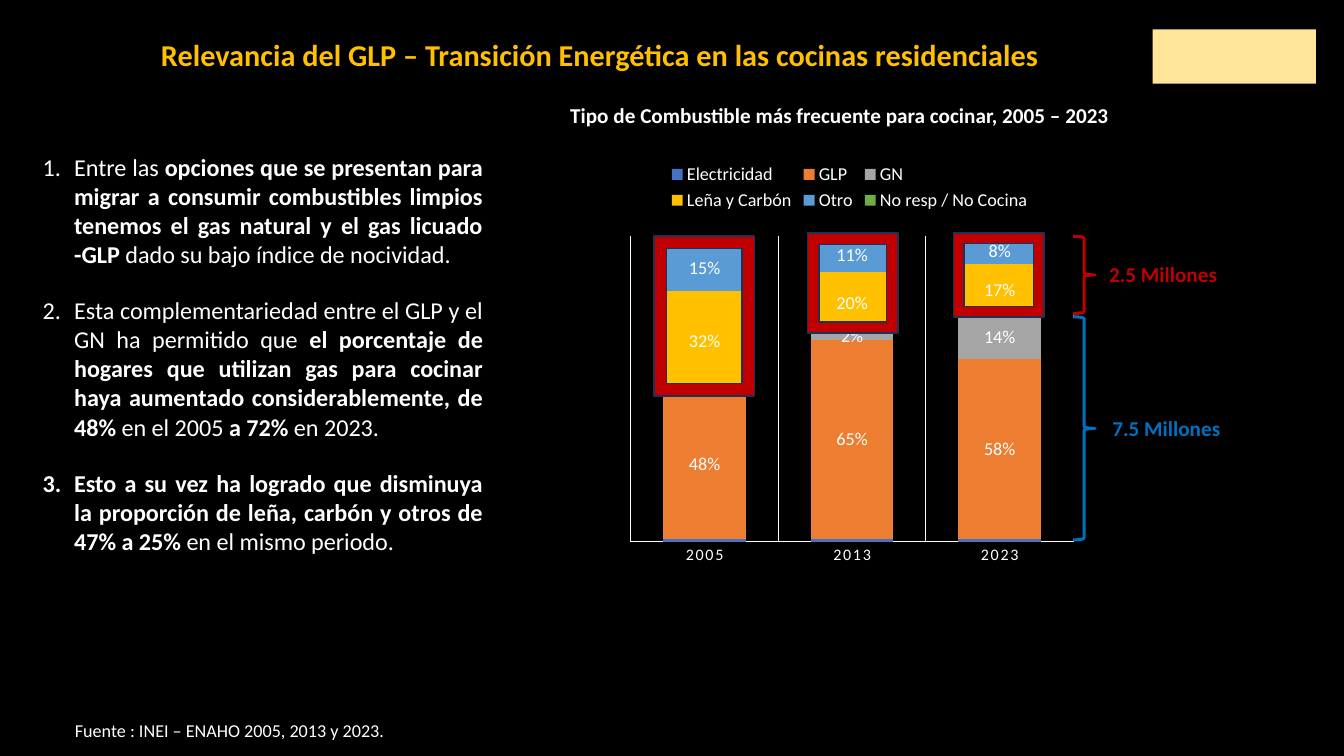
from lxml import etree
from pptx import Presentation
from pptx.chart.data import CategoryChartData
from pptx.dml.color import RGBColor
from pptx.enum.chart import XL_CHART_TYPE, XL_LABEL_POSITION, XL_LEGEND_POSITION, XL_TICK_MARK
from pptx.enum.shapes import MSO_SHAPE
from pptx.enum.text import MSO_ANCHOR, PP_ALIGN
from pptx.oxml import parse_xml
from pptx.oxml.ns import nsdecls, qn
from pptx.util import Inches, Pt

STACKED = XL_CHART_TYPE.COLUMN_STACKED_100
LABEL_CENTER = XL_LABEL_POSITION.CENTER
LEGEND_TOP = XL_LEGEND_POSITION.TOP
NO_TICKS = XL_TICK_MARK.NONE
RECTANGLE = MSO_SHAPE.RECTANGLE
ROUNDED = MSO_SHAPE.ROUNDED_RECTANGLE
BRACE = MSO_SHAPE.RIGHT_BRACE
FRAME = MSO_SHAPE.FRAME
TOP = MSO_ANCHOR.TOP
LEFT, CENTER, JUSTIFY = PP_ALIGN.LEFT, PP_ALIGN.CENTER, PP_ALIGN.JUSTIFY

SLIDE_WIDTH, SLIDE_HEIGHT = Pt(889), Pt(500)
FONT = "Calibri"
BLACK, WHITE, GOLD, CREAM = "000000", "FFFFFF", "FFC000", "FFE699"
RED, BLUE, NAVY = "C00000", "0070C0", "1E3256"

ARGUMENTS = [
    "Entre las **opciones que se presentan para migrar a consumir combustibles limpios "
    "tenemos el gas natural y el gas licuado -GLP **dado su bajo índice de nocividad. ",
    "Esta complementariedad entre el GLP y el GN ha permitido que **el porcentaje de "
    "hogares que utilizan gas para cocinar haya aumentado considerablemente, de 48% **"
    "en el 2005 **a 72%** en 2023. ",
    "**Esto a su vez ha logrado que disminuya la proporción de leña, carbón y otros de "
    "47% a 25% **en el mismo periodo.",
]
YEARS = ["2005", "2013", "2023"]
FUELS = [
    ("Electricidad", (0.01, 0.01, 0.01), "4472C4", False),
    ("GLP", (0.48, 0.65, 0.58), "ED7D31", True),
    ("GN", (0, 0.02, 0.14), "A5A5A5", True),
    ("Leña y Carbón", (0.32, 0.20, 0.17), GOLD, True),
    ("Otro", (0.15, 0.11, 0.08), "5B9BD5", True),
    ("No resp / No Cocina", (0.03, 0.01, 0.01), "70AD47", False),
]
PLOT_AREA = {"x": 0.123, "y": 0.182, "w": 0.763, "h": 0.66}
FRAMES = [(6.01, 2.17, 0.92, 1.47), (8.76, 2.14, 0.83, 0.77), (7.42, 2.14, 0.83, 0.92)]
BRACES = [
    ("2.5 Millones", RED, (9.86, 2.17, 0.2, 0.71), (10.09, 2.35, 1.22, 0.34)),
    ("7.5 Millones", BLUE, (9.86, 2.91, 0.2, 2.05), (10.12, 3.77, 1.22, 0.34)),
]


def color(hex_value):
    """Turn a hex string into a colour."""
    return RGBColor.from_string(hex_value)


def set_font(font, size, hex_value=WHITE, bold=False):
    """Give a font its face, size, colour and weight."""
    font.name, font.size, font.bold = FONT, Pt(size), bold
    font.color.rgb = color(hex_value)


def set_line(line, hex_value, width):
    """Draw a line in one colour and width."""
    line.color.rgb = color(hex_value)
    line.width = Pt(width)


def add_shape(slide, kind, box, fill=BLACK, line=None, width=1):
    """Add a flat preset shape."""
    shape = slide.shapes.add_shape(kind, *map(Inches, box))
    shape.shadow.inherit = False
    shape.fill.solid()
    shape.fill.fore_color.rgb = color(fill)
    if line:
        set_line(shape.line, line, width)
    else:
        shape.line.fill.background()
    return shape


def number_paragraph(paragraph):
    """Number a paragraph with a hanging indent."""
    properties = paragraph._p.get_or_add_pPr()
    properties.set("marL", str(Inches(0.29)))
    properties.set("indent", str(-Inches(0.29)))
    etree.SubElement(properties, qn("a:buFont"), typeface="+mj-lt")
    etree.SubElement(properties, qn("a:buAutoNum"), type="arabicPeriod")


def write_text(shape, *texts, size, hex_value=WHITE, bold=False, align=LEFT,
               after=0, numbered=False, insets=(0.1, 0.05, 0.1, 0.05)):
    """Write paragraphs in a shape, with ** switching the weight."""
    frame = shape.text_frame
    frame.word_wrap = True
    frame.vertical_anchor = TOP
    (frame.margin_left, frame.margin_top,
     frame.margin_right, frame.margin_bottom) = map(Inches, insets)
    for index, text in enumerate(texts):
        paragraph = frame.add_paragraph() if index else frame.paragraphs[0]
        paragraph.alignment = align
        paragraph.space_after = Pt(after)
        if numbered:
            number_paragraph(paragraph)
        for part, words in enumerate(text.split("**")):
            if words:
                run = paragraph.add_run()
                run.text = words
                set_font(run.font, size, hex_value, bold != bool(part % 2))


def add_label(slide, text, box, **text_format):
    """Add a text box with one paragraph."""
    write_text(slide.shapes.add_textbox(*map(Inches, box)), text, **text_format)


def place_plot(chart):
    """Fix the inner plot area inside the chart."""
    places = "".join(f'<c:{key} val="{value}"/>' for key, value in PLOT_AREA.items())
    layout = parse_xml(
        f'<c:layout {nsdecls("c")}><c:manualLayout><c:layoutTarget val="inner"/>'
        f'<c:xMode val="edge"/><c:yMode val="edge"/>{places}</c:manualLayout></c:layout>')
    plot_area = chart._chartSpace.chart.plotArea
    for previous in plot_area.findall(qn("c:layout")):
        plot_area.remove(previous)
    plot_area.insert(0, layout)


def format_axes(chart):
    """Style the year axis and hide the percentage axis."""
    years = chart.category_axis
    years.major_tick_mark = years.minor_tick_mark = NO_TICKS
    set_font(years.tick_labels.font, 10.6)
    for properties in years._element.iter(qn("a:defRPr")):
        properties.set("spc", "120")
    set_line(years.format.line, WHITE, 0.75)
    years.has_major_gridlines = True
    set_line(years.major_gridlines.format.line, WHITE, 0.75)
    shares = chart.value_axis
    shares.visible = shares.has_major_gridlines = False
    shares.minimum_scale, shares.maximum_scale, shares.major_unit = 0, 1, 0.2


def add_fuel_chart(slide):
    """Add the stacked columns of cooking fuels."""
    data = CategoryChartData(number_format="0%")
    data.categories = YEARS
    for name, values, _, _ in FUELS:
        data.add_series(name, values)
    box = map(Inches, (5.14, 1.39, 5.33, 4.26))
    chart = slide.shapes.add_chart(STACKED, *box, data).chart
    set_font(chart.font, 10)
    chart.has_title = False
    chart.has_legend = True
    chart.legend.position = LEGEND_TOP
    chart.legend.include_in_layout = False
    set_font(chart.legend.font, 12)
    plot = chart.plots[0]
    plot.gap_width, plot.overlap, plot.vary_by_categories = 79, 100, False
    for series, (_, _, fill, labelled) in zip(plot.series, FUELS):
        series.format.fill.solid()
        series.format.fill.fore_color.rgb = color(fill)
        if labelled:
            labels = series.data_labels
            labels.show_value = True
            labels.position = LABEL_CENTER
            labels.number_format = "0%;;"
            labels.number_format_is_linked = False
            set_font(labels.font, 12)
    format_axes(chart)
    place_plot(chart)


def main():
    """Build the slide and save it."""
    presentation = Presentation()
    presentation.slide_width, presentation.slide_height = SLIDE_WIDTH, SLIDE_HEIGHT
    slide = presentation.slides.add_slide(presentation.slide_layouts[6])
    slide.background.fill.solid()
    slide.background.fill.fore_color.rgb = color(BLACK)

    title = add_shape(slide, RECTANGLE, (0.98, 0.28, 9.06, 0.44))
    write_text(title, "Relevancia del GLP – Transición Energética en las cocinas residenciales",
               size=20, hex_value=GOLD, bold=True, align=CENTER)
    add_shape(slide, RECTANGLE, (10.59, 0.27, 1.5, 0.5), fill=CREAM)

    panel = add_shape(slide, ROUNDED, (0.17, 1.06, 4.64, 4.57))
    panel.adjustments[0] = 0.046
    write_text(panel, *ARGUMENTS, size=16, align=JUSTIFY, after=18, numbered=True,
               insets=(0.16, 0.28, 0.31, 0.05))
    add_label(slide, "Fuente : INEI – ENAHO 2005, 2013 y 2023.", (0.59, 6.56, 5, 0.3), size=12)

    add_fuel_chart(slide)
    heading = add_shape(slide, RECTANGLE, (5.14, 0.89, 5.33, 0.34))
    write_text(heading, "Tipo de Combustible más frecuente para cocinar, 2005 – 2023",
               size=14, bold=True)
    for text, hex_value, brace_box, label_box in BRACES:
        add_shape(slide, BRACE, brace_box, line=hex_value, width=2)
        add_label(slide, text, label_box, size=14, hex_value=hex_value, bold=True)
    for box in FRAMES:
        add_shape(slide, FRAME, box, fill=RED, line=NAVY)

    presentation.save("out.pptx")


if __name__ == "__main__":
    main()
